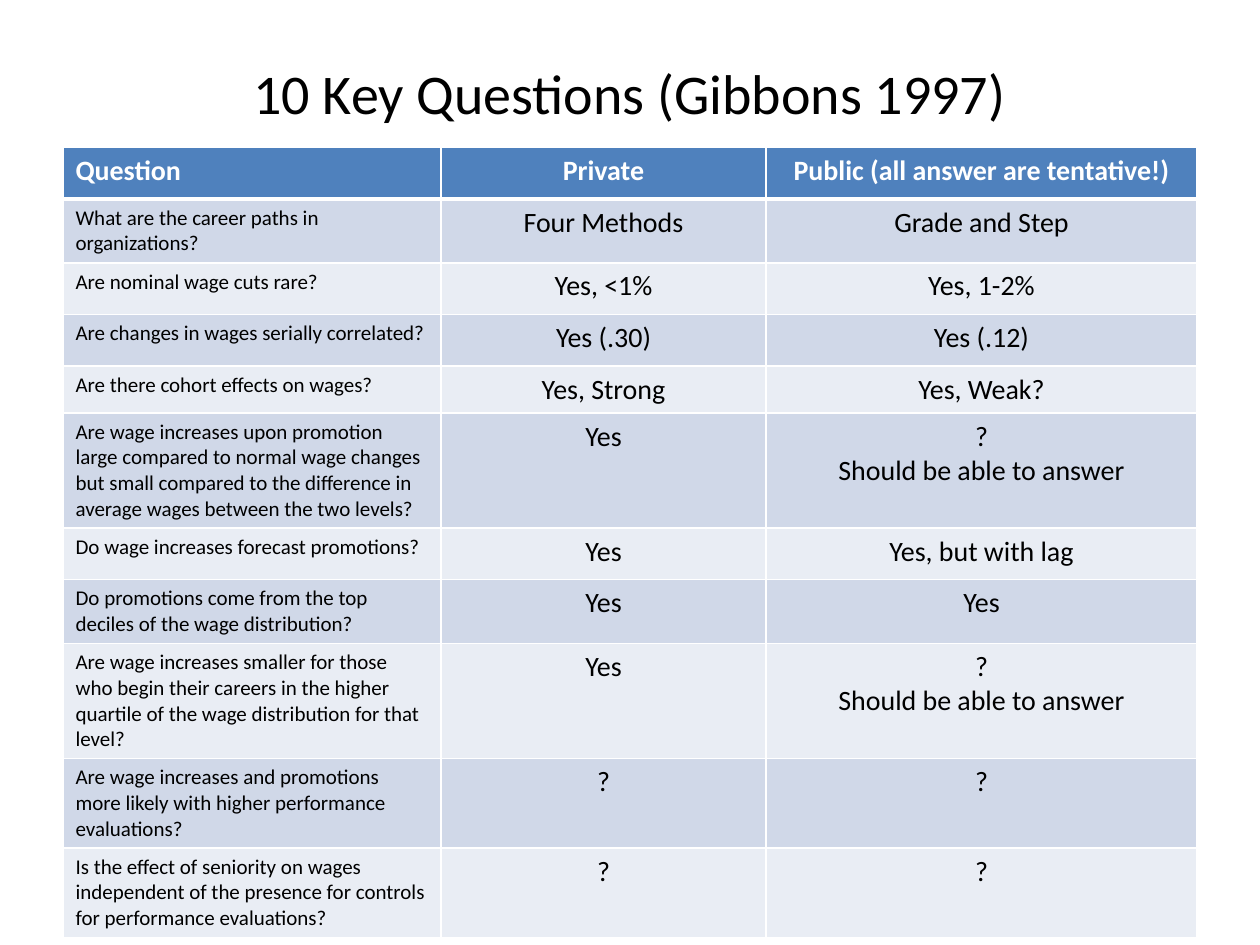
from dataclasses import dataclass

from lxml import etree
from pptx import Presentation
from pptx import util as u
from pptx.dml.color import RGBColor
from pptx.enum import text
from pptx.oxml import ns


@dataclass(frozen=True)
class Theme:
    font: str = "Calibri"
    dark: str = "000000"
    light: str = "FFFFFF"
    head: str = "4F81BD"
    bands: tuple = ("D0D8E8", "E9EDF4")
    title: int = 32
    body: int = 16
    small: int = 12
    line: int = 1
    rule: int = 3


LOOK = Theme()
WIDE, HIGH = u.Inches(10), u.Inches(7.5)
EDGE, TOP, GRID = 0.05, 0.04, 0.156
COLS = (0.3, 0.258, 0.342)
ROW, SLIM = 0.41, 0.32
SLIM_ROW = 4
HEAD = ("Question", "Private", "Public (all answer are tentative!)")
OPEN = "?\nShould be able to answer"
ROWS = (
    ("What are the career paths in organizations?", "Four Methods", "Grade and Step"),
    ("Are nominal wage cuts rare?", "Yes, <1%", "Yes, 1-2%"),
    ("Are changes in wages serially correlated?", "Yes (.30)", "Yes (.12)"),
    ("Are there cohort effects on wages?", "Yes, Strong", "Yes, Weak?"),
    ("Are wage increases upon promotion large compared to normal wage changes "
     "but small compared to the difference in average wages between the two levels?",
     "Yes", OPEN),
    ("Do wage increases forecast promotions?", "Yes", "Yes, but with lag"),
    ("Do promotions come from the top deciles of the wage distribution?", "Yes", "Yes"),
    ("Are wage increases smaller for those who begin their careers in the higher "
     "quartile of the wage distribution for that level?", "Yes", OPEN),
    ("Are wage increases and promotions more likely with higher performance "
     "evaluations?", "?", "?"),
    ("Is the effect of seniority on wages independent of the presence for controls "
     "for performance evaluations?", "?", "?"),
)


def put(item, values):
    for name, value in values.items():
        setattr(item, name, value)


def write(frame, words, size, color, align, bold=False):
    frame.text = words
    for para in frame.paragraphs:
        para.alignment = align
        for run in para.runs:
            put(run.font, {"name": LOOK.font, "size": u.Pt(size), "bold": bold})
            run.font.color.rgb = RGBColor.from_string(color)


def border(cell, sides):
    props = cell._tc.get_or_add_tcPr()
    for spot, (side, width) in enumerate(sides.items()):
        line = etree.Element(ns.qn(f"a:ln{side}"), w=str(u.Pt(width)))
        fill = etree.SubElement(line, ns.qn("a:solidFill"))
        etree.SubElement(fill, ns.qn("a:srgbClr"), val=LOOK.light)
        props.insert(spot, line)


def title(slide, words):
    shape = slide.shapes.title
    put(shape, {"left": int(WIDE * EDGE), "top": int(HIGH * TOP),
                "width": int(WIDE * (1 - 2 * EDGE)),
                "height": int(HIGH * (GRID - TOP))})
    shape.text_frame.vertical_anchor = text.MSO_ANCHOR.MIDDLE
    write(shape.text_frame, words, LOOK.title, LOOK.dark, text.PP_ALIGN.CENTER)


def style(cell, words, row, col):
    head = row == 0
    size = LOOK.small if col == 0 and not head else LOOK.body
    align = text.PP_ALIGN.CENTER if col else text.PP_ALIGN.LEFT
    write(cell.text_frame, words, size, LOOK.light if head else LOOK.dark, align, head)
    cell.fill.solid()
    tint = LOOK.head if head else LOOK.bands[(row - 1) % 2]
    cell.fill.fore_color.rgb = RGBColor.from_string(tint)
    border(cell, {"L": LOOK.line, "R": LOOK.line,
                  "T": LOOK.rule if row == 1 else LOOK.line,
                  "B": LOOK.rule if head else LOOK.line})


def table(slide, data):
    sizes = [u.Inches(SLIM if row == SLIM_ROW else ROW) for row in range(len(data))]
    span = int(WIDE * (1 - 2 * EDGE))
    grid = slide.shapes.add_table(len(data), len(COLS), int(WIDE * EDGE),
                                  int(HIGH * GRID), span, sum(sizes)).table
    for col, share in zip(grid.columns, COLS):
        col.width = int(WIDE * share)
    for row, size in zip(grid.rows, sizes):
        row.height = size
    for row, line in enumerate(data):
        for col, words in enumerate(line):
            style(grid.cell(row, col), words, row, col)


def main():
    deck = Presentation()
    put(deck, {"slide_width": WIDE, "slide_height": HIGH})
    slide = deck.slides.add_slide(deck.slide_layouts.get_by_name("Title Only"))
    title(slide, "10 Key Questions (Gibbons 1997)")
    table(slide, (HEAD, *ROWS))
    deck.save("out.pptx")


if __name__ == "__main__":
    main()
